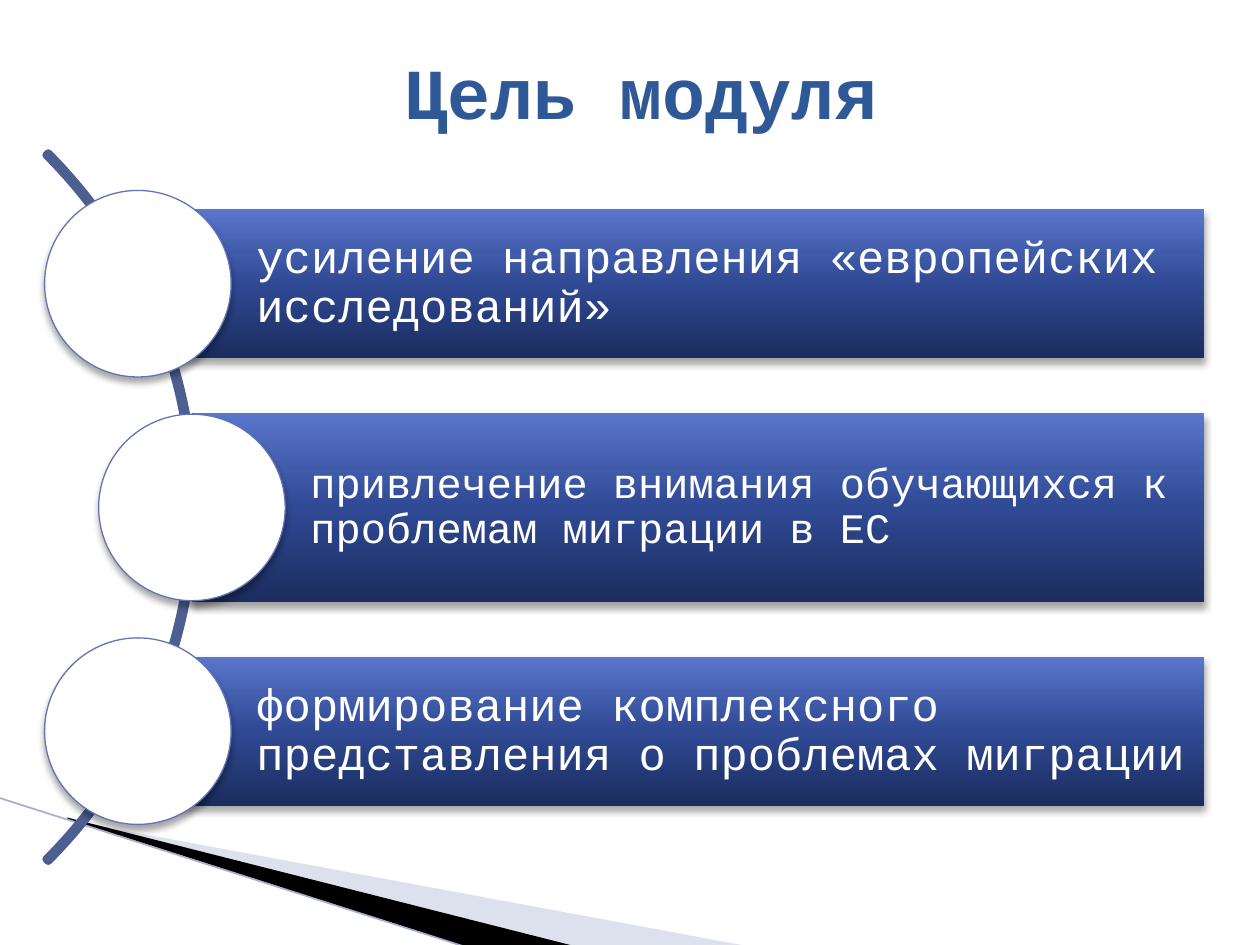
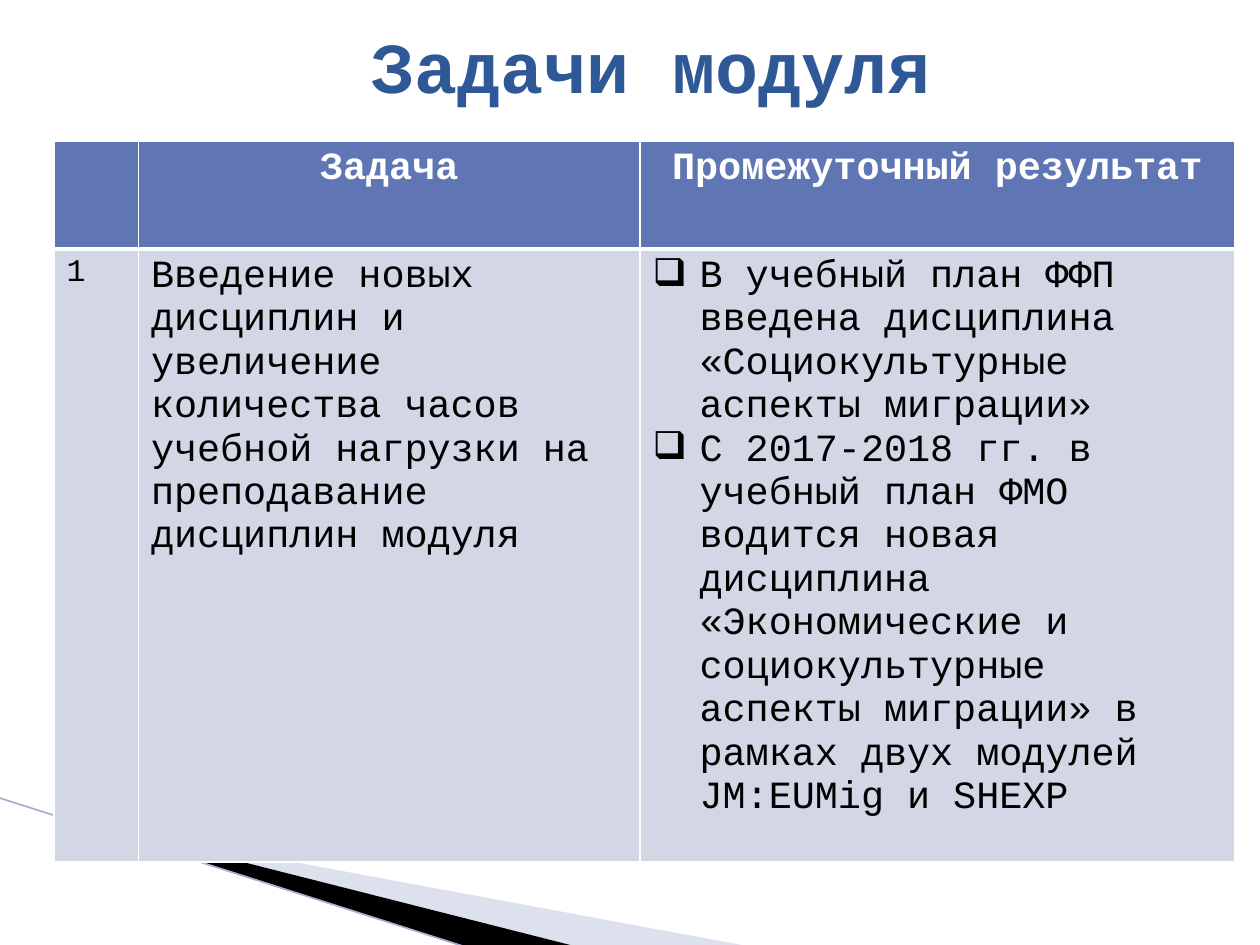
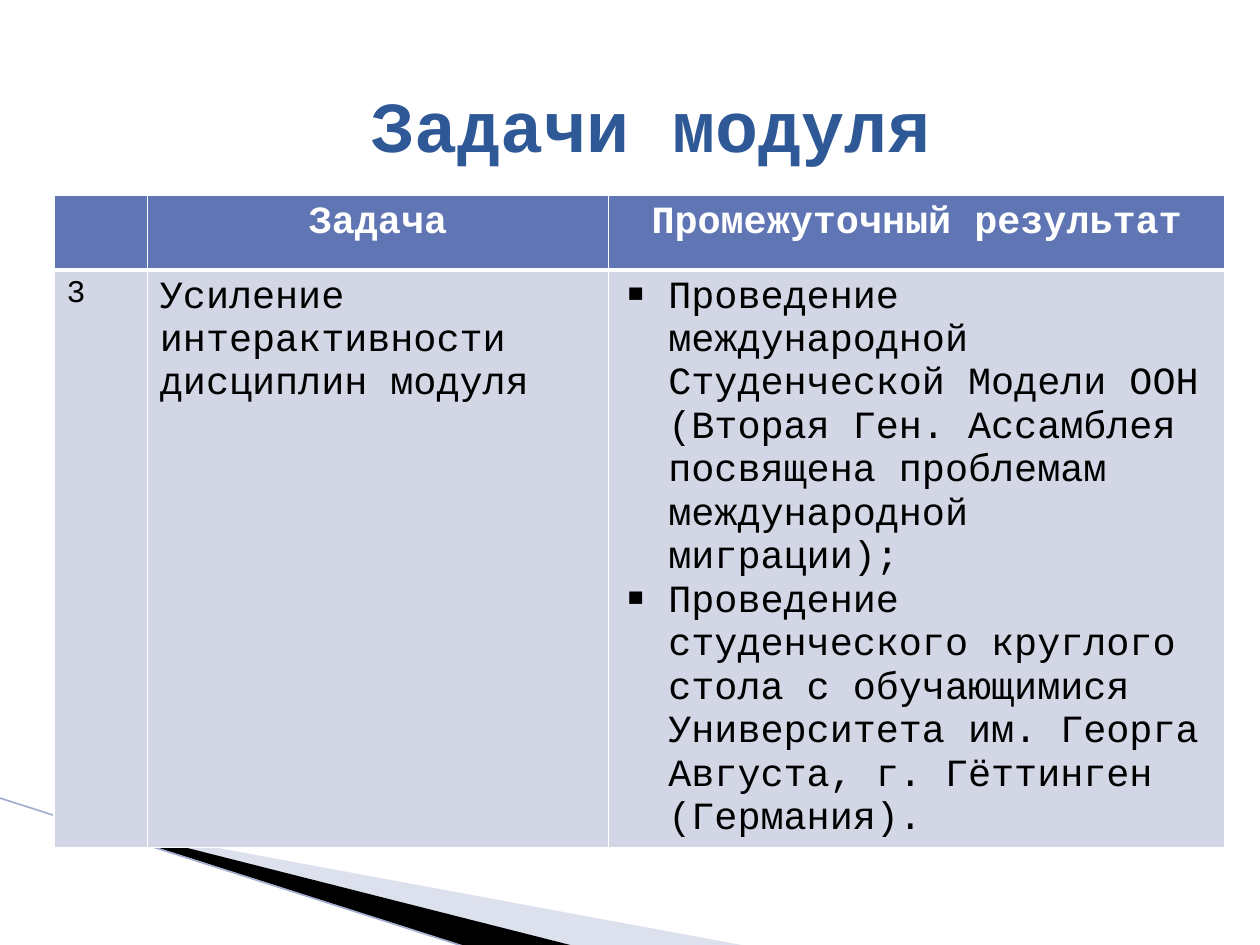
from copy import deepcopy

from pptx import Presentation
from pptx.dml.color import RGBColor
from pptx.enum import shapes, text
from pptx.oxml import ns, xmlchemy
from pptx.util import Cm, Pt

# Shared look
FONT = "Courier New"
WHITE = RGBColor(0xFF, 0xFF, 0xFF)
BLACK = RGBColor(0x00, 0x00, 0x00)
TITLE_BLUE = RGBColor(0x2F, 0x58, 0x97)
ACCENT = RGBColor(0x60, 0x76, 0xB4)
CELL_BLUE = RGBColor(0xD2, 0xD6, 0xE5)
ARC_BLUE = RGBColor(0x4D, 0x5E, 0x90)
WEDGE_BLUE = RGBColor(0xAC, 0xB4, 0xD5)
EDGE_BLUE = RGBColor(0xA4, 0xAE, 0xD0)
BAR_GRADIENT = [
    (0, RGBColor(0x1B, 0x2D, 0x5E)),
    (0.5, RGBColor(0x2F, 0x49, 0x94)),
    (0.7, RGBColor(0x40, 0x5B, 0xA9)),
    (1, RGBColor(0x5A, 0x76, 0xCD)),
]

# Goal slide layout, in cm
GOALS = [
    # circle centre, bar height, text size, wording
    (2.78, 3.0, 26, "усиление направления «европейских исследований»"),
    (3.87, 3.81, 24, "привлечение внимания обучающихся к проблемам миграции в ЕС"),
    (2.78, 3.0, 26, "формирование комплексного представления о проблемах миграции"),
]
FIRST_GOAL_Y, GOAL_PITCH = 5.72, 4.51
BAR_RIGHT = 24.28
CIRCLE = 3.76

HEADINGS = ["", "Задача", "Промежуточный результат"]


def add_child(parent, tag, **attributes):
    child = xmlchemy.OxmlElement(tag)
    for name, value in attributes.items():
        child.set(name, str(value))
    parent.append(child)
    return child


def add_span(para, wording, size, color, bold=False):
    span = para.add_run()
    span.text = wording
    span.font.name = FONT
    span.font.size = Pt(size)
    span.font.bold = bold
    span.font.color.rgb = color


def add_bullet(para, symbol):
    properties = para._p.get_or_add_pPr()
    properties.set("marL", str(Cm(0.95)))
    properties.set("indent", str(-Cm(0.95)))
    add_child(properties, "a:buChar", char=symbol)


def add_shadow(shape):
    shape.shadow.inherit = False
    effects = shape.element.spPr.find(ns.qn("a:effectLst"))
    shadow = add_child(effects, "a:outerShdw", blurRad=Pt(4), dist=Pt(3),
                       dir=90 * 60000, rotWithShape=0)
    color = add_child(shadow, "a:srgbClr", val=BLACK)
    add_child(color, "a:alpha", val=35000)


# Corner decoration
def add_wedge(page, points, color, alpha=None):
    corners = [(Cm(x), Cm(y)) for x, y in points]
    builder = page.shapes.build_freeform(*corners[0])
    builder.add_line_segments(corners[1:])
    wedge = builder.convert_to_shape()
    wedge.shadow.inherit = False
    wedge.fill.solid()
    wedge.fill.fore_color.rgb = color
    wedge.line.fill.background()
    if alpha:
        fill_color = wedge.element.spPr.find(ns.qn("a:solidFill"))[0]
        add_child(fill_color, "a:alpha", val=alpha * 1000)


def add_corner(page):
    add_wedge(page, [(1.4, 16.54), (15.11, 19.08), (11.58, 19.08), (1.4, 16.51)],
              WEDGE_BLUE, alpha=40)
    add_wedge(page, [(1.35, 16.48), (11.61, 19.08), (9.45, 19.1), (1.37, 16.51)], BLACK)
    edge = page.shapes.add_connector(shapes.MSO_CONNECTOR.STRAIGHT,
                                     Cm(-0.03), Cm(16.08), Cm(9.42), Cm(19.1))
    edge.line.color.rgb = EDGE_BLUE
    edge.line.width = Pt(0.95)
    add_child(edge.element.spPr, "a:effectLst")


def add_page(deck):
    page = deck.slides.add_slide(deck.slide_layouts[6])
    add_corner(page)
    return page


def add_title(page, wording, left, top, height):
    box = page.shapes.add_textbox(Cm(left), Cm(top), Cm(22.86), Cm(height))
    frame = box.text_frame
    frame.word_wrap = True
    frame.vertical_anchor = text.MSO_ANCHOR.MIDDLE
    para = frame.paragraphs[0]
    para.alignment = text.PP_ALIGN.CENTER
    add_span(para, wording, 41, TITLE_BLUE, bold=True)


# Goal list
def add_arc(page):
    arc = page.shapes.add_shape(shapes.MSO_SHAPE.BLOCK_ARC,
                                Cm(-16.26), Cm(0.13), Cm(20.19), Cm(20.19))
    for index, value in enumerate([189, 27, 0.003]):
        arc.adjustments[index] = value
    arc.shadow.inherit = False
    arc.fill.background()
    arc.line.color.rgb = ARC_BLUE
    arc.line.width = Pt(4.33)


def fill_bar(bar):
    bar.fill.gradient()
    bar.fill.gradient_angle = 90
    stop_list = bar.element.spPr.find(ns.qn("a:gradFill")).find(ns.qn("a:gsLst"))
    while len(stop_list) < len(BAR_GRADIENT):
        stop_list.append(deepcopy(stop_list[0]))
    for stop, (position, color) in zip(bar.fill.gradient_stops, BAR_GRADIENT):
        stop.position = position
        stop.color.rgb = color


def add_goal(page, center_x, center_y, height, size, wording):
    bar = page.shapes.add_shape(shapes.MSO_SHAPE.RECTANGLE,
                                Cm(center_x), Cm(center_y - height / 2),
                                Cm(BAR_RIGHT - center_x), Cm(height))
    fill_bar(bar)
    bar.line.fill.background()
    add_shadow(bar)
    frame = bar.text_frame
    frame.word_wrap = True
    frame.vertical_anchor = text.MSO_ANCHOR.MIDDLE
    frame.margin_left = Cm(2.39)
    frame.margin_top = frame.margin_right = frame.margin_bottom = Cm(0.18)
    para = frame.paragraphs[0]
    para.alignment = text.PP_ALIGN.LEFT
    para.line_spacing = 0.9
    add_span(para, wording, size, WHITE)

    circle = page.shapes.add_shape(shapes.MSO_SHAPE.OVAL,
                                   Cm(center_x - CIRCLE / 2), Cm(center_y - CIRCLE / 2),
                                   Cm(CIRCLE), Cm(CIRCLE))
    circle.fill.solid()
    circle.fill.fore_color.rgb = WHITE
    circle.line.color.rgb = ACCENT
    circle.line.width = Pt(0.75)
    add_shadow(circle)


# Task table
def style_cell(cell, color, top=1, bottom=1):
    properties = cell._tc.get_or_add_tcPr()
    for side, width in zip("LRTB", [1, 1, top, bottom]):
        border = add_child(properties, f"a:ln{side}", w=Pt(width))
        add_child(add_child(border, "a:solidFill"), "a:srgbClr", val=WHITE)
    cell.fill.solid()
    cell.fill.fore_color.rgb = color


def add_task_table(page, top, widths, heights, number, task, results, symbol):
    frame = page.shapes.add_table(2, 3, Cm(1.09), Cm(top),
                                  Cm(sum(widths)), Cm(sum(heights)))
    table = frame.table
    for column, width in zip(table.columns, widths):
        column.width = Cm(width)
    for row, height in zip(table.rows, heights):
        row.height = Cm(height)

    for index, heading in enumerate(HEADINGS):
        cell = table.cell(0, index)
        style_cell(cell, ACCENT, bottom=3)
        if heading:
            para = cell.text_frame.paragraphs[0]
            para.alignment = text.PP_ALIGN.CENTER
            add_span(para, heading, 22, WHITE, bold=True)
        style_cell_below = table.cell(1, index)
        style_cell(style_cell_below, CELL_BLUE, top=3)

    add_span(table.cell(1, 0).text_frame.paragraphs[0], number, 18, BLACK)
    add_span(table.cell(1, 1).text_frame.paragraphs[0], task, 22, BLACK)
    result_frame = table.cell(1, 2).text_frame
    for index, result in enumerate(results):
        para = result_frame.add_paragraph() if index else result_frame.paragraphs[0]
        add_bullet(para, symbol)
        add_span(para, result, 22, BLACK)


def main():
    deck = Presentation()
    deck.slide_width, deck.slide_height = Cm(25.4), Cm(19.05)

    # Goal of the module
    page = add_page(deck)
    add_title(page, "Цель модуля", 1.5, 0.53, 2.62)
    add_arc(page)
    for index, (center_x, height, size, wording) in enumerate(GOALS):
        add_goal(page, center_x, FIRST_GOAL_Y + index * GOAL_PITCH, height, size, wording)

    # Task 1
    page = add_page(deck)
    add_title(page, "Задачи модуля", 1.7, -0.28, 3.18)
    add_task_table(
        page, 2.84, [1.7, 10.11, 11.99], [2.18, 10.49], "1",
        "Введение новых дисциплин и увеличение количества часов учебной нагрузки "
        "на преподавание дисциплин модуля",
        ["В учебный план ФФП введена дисциплина «Социокультурные аспекты миграции»",
         "С 2017-2018 гг. в учебный план ФМО водится новая дисциплина «Экономические и "
         "социокультурные аспекты миграции» в рамках двух модулей JM:EUMig и SHEXP"],
        "❑")

    # Task 3
    page = add_page(deck)
    add_task_table(
        page, 3.94, [1.88, 9.3, 12.42], [1.5, 11.43], "3",
        "Усиление интерактивности дисциплин модуля",
        ["Проведение международной Студенческой Модели ООН (Вторая Ген. Ассамблея "
         "посвящена проблемам международной миграции);",
         "Проведение студенческого круглого стола с обучающимися Университета "
         "им. Георга Августа, г. Гёттинген (Германия)."],
        "▪")
    add_title(page, "Задачи модуля", 1.7, 0.91, 3.18)

    deck.save("out.pptx")


if __name__ == "__main__":
    main()
